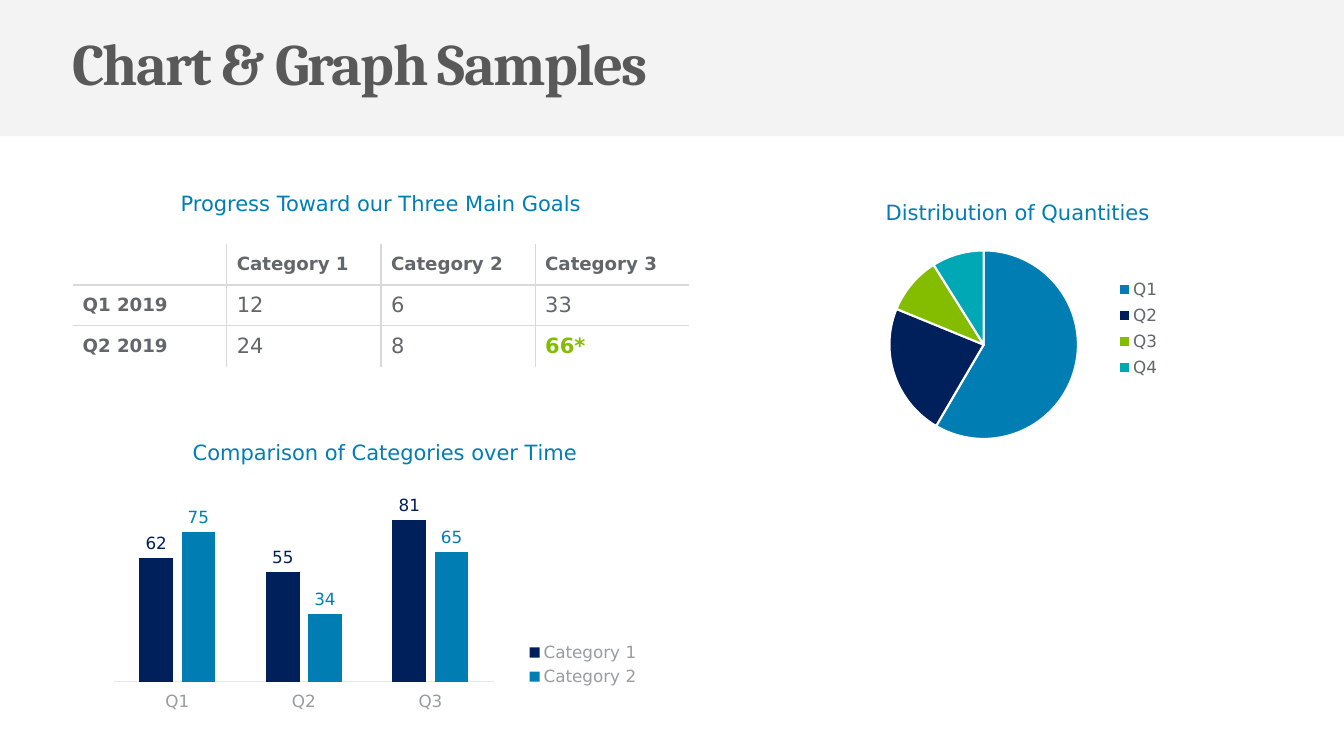
"""Build a slide with a table, a pie chart and a column chart."""
from dataclasses import dataclass

from lxml.etree import SubElement
from pptx import Presentation
from pptx.chart.chart import Chart
from pptx.chart.data import CategoryChartData
from pptx.dml.color import RGBColor
from pptx.enum.chart import XL_CHART_TYPE as ChartType
from pptx.enum.chart import XL_LABEL_POSITION as LabelPosition
from pptx.enum.chart import XL_LEGEND_POSITION as LegendPosition
from pptx.enum.chart import XL_TICK_LABEL_POSITION as TickLabelPosition
from pptx.enum.chart import XL_TICK_MARK as TickMark
from pptx.enum.shapes import MSO_SHAPE as ShapeKind
from pptx.enum.text import MSO_ANCHOR as Anchor
from pptx.enum.text import PP_ALIGN as Align
from pptx.oxml.ns import qn
from pptx.slide import Slide
from pptx.text.text import Font, TextFrame
from pptx.util import Cm, Pt

WHITE = RGBColor(0xFF, 0xFF, 0xFF)
RULE_GRAY = RGBColor(0xD9, 0xD9, 0xD9)
AXIS_GRAY = RGBColor(0xE7, 0xE8, 0xE9)
TITLE_GRAY = RGBColor(0x59, 0x59, 0x59)
TEXT_GRAY = RGBColor(0x63, 0x66, 0x6A)
LABEL_GRAY = RGBColor(0x99, 0x9C, 0x9E)
BLUE = RGBColor(0x00, 0x7E, 0xB4)
NAVY = RGBColor(0x00, 0x20, 0x5B)
GREEN = RGBColor(0x84, 0xBD, 0x00)
TEAL = RGBColor(0x00, 0xA7, 0xB5)

HEADING_FONT = "Cambria"
BODY_FONT = "DejaVu Sans"

TABLE_ROWS = [
    ["", "Category 1", "Category 2", "Category 3"],
    ["Q1 2019", "12", "6", "33"],
    ["Q2 2019", "24", "8", "66*"],
]


@dataclass(frozen=True)
class Box:
    """A rectangle, in centimetres on the slide or in fractions of a chart."""
    left: float
    top: float
    width: float
    height: float

    def lengths(self) -> tuple[Cm, Cm, Cm, Cm]:
        """Return the four slide lengths."""
        return Cm(self.left), Cm(self.top), Cm(self.width), Cm(self.height)


@dataclass(frozen=True)
class ChartSpec:
    """The content and arrangement of one chart."""
    kind: ChartType
    title: str
    box: Box
    categories: list[str]
    series: dict[str, list[int]]
    legend_color: RGBColor
    title_area: Box
    plot_area: Box
    legend_area: Box


PIE = ChartSpec(
    ChartType.PIE, "Distribution of Quantities", Box(20.8, 4.75, 9.5, 6.73),
    ["Q1", "Q2", "Q3", "Q4"], {"Distribution of Quantities": [59, 23, 10, 9]},
    TEXT_GRAY, Box(0.15, 0.02, 0.7, 0.1), Box(0.17, 0.23, 0.5, 0.71),
    Box(0.73, 0.32, 0.2, 0.41))
COLUMNS = ChartSpec(
    ChartType.COLUMN_CLUSTERED, "Comparison of Categories over Time",
    Box(2.44, 10.39, 14.5, 7.8), ["Q1", "Q2", "Q3"],
    {"Category 1": [62, 55, 81], "Category 2": [75, 34, 65]},
    LABEL_GRAY, Box(0.16, 0.07, 0.7, 0.1), Box(0.03, 0.29, 0.66, 0.58),
    Box(0.73, 0.73, 0.23, 0.17))


def style_font(font: Font, size: float, color: RGBColor, name: str = BODY_FONT,
               bold: bool = False) -> None:
    """Set the face, size, colour and weight of a font."""
    font.name, font.size, font.bold = name, Pt(size), bold
    font.color.rgb = color


def write(frame: TextFrame, text: str, *, size: float, color: RGBColor,
          name: str = BODY_FONT, bold: bool = False, align: Align | None = None,
          line_spacing: float | None = None, tracking: float = 0) -> None:
    """Write one formatted run into a text frame."""
    paragraph = frame.paragraphs[0]
    paragraph.alignment, paragraph.line_spacing = align, line_spacing
    run = paragraph.add_run()
    run.text = text
    style_font(run.font, size, color, name, bold)
    if tracking:
        run.font._element.set("spc", str(round(tracking * 100)))


def add_text(slide: Slide, box: Box, text: str, **text_format) -> None:
    """Add a wrapping text box."""
    frame = slide.shapes.add_textbox(*box.lengths()).text_frame
    frame.word_wrap = True
    write(frame, text, line_spacing=0.9, **text_format)


def add_band(slide: Slide) -> None:
    """Add the pale band behind the title."""
    band = slide.shapes.add_shape(ShapeKind.RECTANGLE, *Box(0, 0, 33.87, 3.43).lengths())
    band.shadow.inherit = False
    band.line.fill.background()
    band.fill.solid()
    band.fill.fore_color.rgb = RULE_GRAY
    color = band._element.spPr.find(qn("a:solidFill"))[0]
    SubElement(color, qn("a:alpha"), val="29000")


def add_goals_table(slide: Slide) -> None:
    """Add the table, ruled between its cells only."""
    last_row, last_column = len(TABLE_ROWS) - 1, len(TABLE_ROWS[0]) - 1
    table = slide.shapes.add_table(last_row + 1, last_column + 1,
                                   *Box(1.83, 6.15, 15.54, 3.1).lengths()).table
    table.first_row = table.horz_banding = False
    for row, texts in enumerate(TABLE_ROWS):
        table.rows[row].height = Cm(1.03)
        for column, text in enumerate(texts):
            cell = table.cell(row, column)
            cell.vertical_anchor = Anchor.MIDDLE
            sides = {"a:lnL": column > 0, "a:lnR": column < last_column,
                     "a:lnT": row > 0, "a:lnB": row < last_row}
            for side, ruled in sides.items():
                line = SubElement(cell._tc.get_or_add_tcPr(), qn(side), w=str(Pt(1)))
                fill = SubElement(line, qn("a:solidFill" if ruled else "a:noFill"))
                if ruled:
                    SubElement(fill, qn("a:srgbClr"), val=str(RULE_GRAY))
            cell.fill.background()
            heading, starred = row == 0 or column == 0, text.endswith("*")
            if text:
                write(cell.text_frame, text, size=13 if heading else 15,
                      color=GREEN if starred else TEXT_GRAY, bold=heading or starred)


def place(part, area: Box, sized: bool = True) -> None:
    """Fix a chart part at fractions of the chart area."""
    for old_layout in part.findall(qn("c:layout")):
        part.remove(old_layout)
    layout = SubElement(part, qn("c:layout"))
    overlay = part.find(qn("c:overlay"))
    if overlay is None:
        part.insert(0, layout)
    else:
        overlay.addprevious(layout)
    manual = SubElement(layout, qn("c:manualLayout"))
    if part.tag == qn("c:plotArea"):
        SubElement(manual, qn("c:layoutTarget"), val="inner")
    settings = {"xMode": "edge", "yMode": "edge", "x": area.left, "y": area.top}
    if sized:
        settings |= {"w": area.width, "h": area.height}
    for key, value in settings.items():
        SubElement(manual, qn(f"c:{key}"), val=str(value))


def add_chart(slide: Slide, spec: ChartSpec) -> Chart:
    """Add a chart with its title, legend and arrangement."""
    data = CategoryChartData()
    data.categories = spec.categories
    for name, values in spec.series.items():
        data.add_series(name, values)
    chart = slide.shapes.add_chart(spec.kind, *spec.box.lengths(), data).chart
    style_font(chart.font, 10, TEXT_GRAY)
    write(chart.chart_title.text_frame, spec.title, size=15, color=BLUE)
    chart.has_legend = True
    chart.legend.position = LegendPosition.RIGHT
    chart.legend.include_in_layout = False
    style_font(chart.legend.font, 12, spec.legend_color)
    place(chart.chart_title._element, spec.title_area, sized=False)
    place(chart.legend._element, spec.legend_area)
    place(chart._chartSpace.chart.plotArea, spec.plot_area)
    return chart


def add_pie(slide: Slide) -> None:
    """Add the pie chart with white edges."""
    plot = add_chart(slide, PIE).plots[0]
    plot.vary_by_categories = True
    for index, color in enumerate((BLUE, NAVY, GREEN, TEAL)):
        slice_format = plot.series[0].points[index].format
        slice_format.fill.solid()
        slice_format.fill.fore_color.rgb = color
        slice_format.line.color.rgb, slice_format.line.width = WHITE, Pt(1.5)


def add_columns(slide: Slide) -> None:
    """Add the column chart with labelled columns."""
    chart = add_chart(slide, COLUMNS)
    plot, values, categories = chart.plots[0], chart.value_axis, chart.category_axis
    plot.vary_by_categories, plot.gap_width, plot.overlap = False, 150, -25
    values.visible = values.has_major_gridlines = False
    values.minimum_scale, values.maximum_scale = 0, 90
    categories.major_tick_mark = TickMark.NONE
    categories.tick_label_position = TickLabelPosition.LOW
    categories.format.line.color.rgb, categories.format.line.width = AXIS_GRAY, Pt(0.75)
    style_font(categories.tick_labels.font, 12, LABEL_GRAY)
    for series, color in zip(plot.series, (NAVY, BLUE)):
        series.format.fill.solid()
        series.format.fill.fore_color.rgb = color
        series.data_labels.show_value = True
        series.data_labels.position = LabelPosition.OUTSIDE_END
        style_font(series.data_labels.font, 12, color)


def main() -> None:
    """Build and save the presentation."""
    presentation = Presentation()
    presentation.slide_width, presentation.slide_height = Cm(33.87), Cm(19.05)
    slide = presentation.slides.add_slide(presentation.slide_layouts[6])
    add_band(slide)
    add_text(slide, Box(1.57, 0.74, 20.45, 1.88), "Chart & Graph Samples", size=42,
             color=TITLE_GRAY, name=HEADING_FONT, bold=True, tracking=-1.2)
    add_goals_table(slide)
    add_text(slide, Box(1.83, 4.75, 15.54, 0.84), "Progress Toward our Three Main Goals",
             size=15, color=BLUE, align=Align.CENTER)
    add_pie(slide)
    add_columns(slide)
    presentation.save("out.pptx")


if __name__ == "__main__":
    main()
